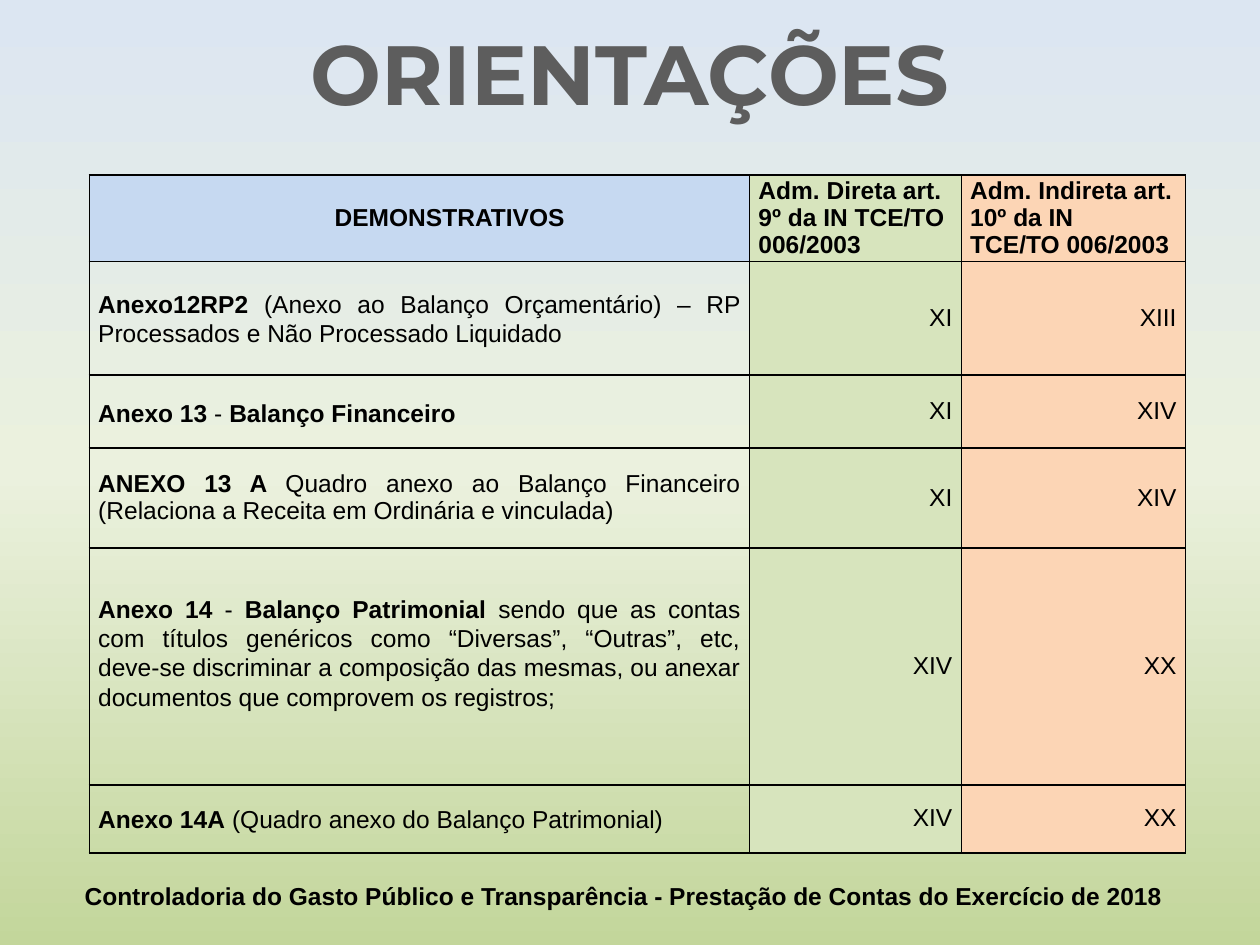
from dataclasses import dataclass

from lxml.etree import SubElement
from pptx import Presentation
from pptx.dml.color import RGBColor
from pptx.enum.text import MSO_ANCHOR, PP_ALIGN
from pptx.oxml import parse_xml
from pptx.oxml.ns import nsdecls, qn
from pptx.util import Cm, Pt


@dataclass(frozen=True)
class Theme:
    """Colours, fonts and type sizes of the slide."""
    background: tuple = ((0, "DCE6F2"), (50, "EBF1DE"), (100, "C3D69B"))
    header: str = "C6D9F1"
    direct: str = "D7E4BD"
    indirect: str = "FCD5B5"
    ink: str = "000000"
    title: str = "5D5D5D"
    title_font: str = "Montserrat"
    body_font: str = "Arial"
    title_size: int = 48
    body_size: int = 14


THEME = Theme()
TITLE = "ORIENTAÇÕES"
FOOTER = "Controladoria do Gasto Público e Transparência - Prestação de Contas do Exercício de 2018"
HEADERS = [
    ["DEMONSTRATIVOS"],
    ["Adm. Direta art. 9º da IN TCE/TO 006/2003"],
    ["Adm. Indireta art. 10º da IN", "TCE/TO 006/2003"],
]
# fmt: each statement alternates bold and regular text
STATEMENTS = [
    (["Anexo12RP2 ", "(Anexo ao Balanço Orçamentário) – RP Processados e Não Processado Liquidado"],
     "XI", "XIII", 1.07),
    (["Anexo 13", " - ", "Balanço Financeiro"], "XI", "XIV", 1.15),
    (["ANEXO 13 A ", "Quadro anexo ao Balanço Financeiro (Relaciona a Receita em Ordinária e vinculada)"],
     "XI", "XIV", 0.98),
    (["Anexo 14", " - ", "Balanço Patrimonial ",
      "sendo que as contas com títulos genéricos como “Diversas”, “Outras”, etc, deve-se discriminar "
      "a composição das mesmas, ou anexar documentos que comprovem os registros;"],
     "XIV", "XX", 1.07),
    (["Anexo 14A", " (Quadro anexo do Balanço Patrimonial)"], "XIV", "XX", 1.07),
]
COLUMN_WIDTHS = [13.31, 4.27, 4.52]
ROW_HEIGHTS = [1.6, 2.29, 1.47, 2.01, 4.78, 1.37]
TALL_ROW, TALL_ROW_BOTTOM = 4, 0.55


def style_run(run, bold, font=THEME.body_font, size=THEME.body_size, color=THEME.ink):
    run.font.name, run.font.size, run.font.bold = font, Pt(size), bold
    run.font.color.rgb = RGBColor.from_string(color)


def paint_background(slide):
    fill = slide.background.fill
    fill.gradient()
    fill.gradient_angle = 270
    stops = slide.element.find(".//" + qn("a:gsLst"))
    for stop in list(stops):
        stops.remove(stop)
    for position, color in THEME.background:
        stop = SubElement(stops, qn("a:gs"), pos=str(position * 1000))
        SubElement(stop, qn("a:srgbClr"), val=color)


def add_label(slide, text, box, alignment, **style):
    frame = slide.shapes.add_textbox(*map(Cm, box)).text_frame
    frame.word_wrap = True
    frame.text = text
    paragraph = frame.paragraphs[0]
    paragraph.alignment = alignment
    style_run(paragraph.runs[0], True, **style)


def format_cell(cell, fill):
    cell.vertical_anchor = MSO_ANCHOR.MIDDLE
    cell.margin_left = cell.margin_right = Cm(0.18)
    cell.margin_top = cell.margin_bottom = 0
    if fill:
        cell.fill.solid()
        cell.fill.fore_color.rgb = RGBColor.from_string(fill)
    else:
        cell.fill.background()
    properties = cell._tc.get_or_add_tcPr()
    for index, side in enumerate("LRTB"):
        properties.insert(index, parse_xml(
            f'<a:ln{side} {nsdecls("a")} w="{Pt(1)}"><a:solidFill>'
            f'<a:srgbClr val="{THEME.ink}"/></a:solidFill></a:ln{side}>'))


def write_cell(cell, lines, bold, alignment, spacing):
    cell.text_frame.text = "\n".join(lines)
    for paragraph in cell.text_frame.paragraphs:
        paragraph.alignment, paragraph.line_spacing = alignment, spacing
        for run in paragraph.runs:
            style_run(run, bold)


def write_statement(cell, parts, spacing):
    paragraph = cell.text_frame.paragraphs[0]
    paragraph.alignment, paragraph.line_spacing = PP_ALIGN.JUSTIFY, spacing
    for index, part in enumerate(parts):
        run = paragraph.add_run()
        run.text = part
        style_run(run, index % 2 == 0)


def add_statement_table(slide):
    table = slide.shapes.add_table(
        len(ROW_HEIGHTS), len(COLUMN_WIDTHS), Cm(1.8), Cm(3.53),
        Cm(sum(COLUMN_WIDTHS)), Cm(sum(ROW_HEIGHTS))).table
    table.first_row = table.horz_banding = False
    for column, width in zip(table.columns, COLUMN_WIDTHS):
        column.width = Cm(width)
    for row, height in zip(table.rows, ROW_HEIGHTS):
        row.height = Cm(height)
    for row_index, row in enumerate(table.rows):
        first_fill = None if row_index else THEME.header
        for cell, fill in zip(row.cells, (first_fill, THEME.direct, THEME.indirect)):
            format_cell(cell, fill)
    for index, lines in enumerate(HEADERS):
        alignment = PP_ALIGN.LEFT if index else PP_ALIGN.CENTER
        write_cell(table.cell(0, index), lines, True, alignment, 0.98)
    heading = table.cell(0, 0).text_frame.paragraphs[0]
    heading._p.get_or_add_pPr().set("indent", str(Cm(1.22)))
    for row_index, (parts, direct, indirect, spacing) in enumerate(STATEMENTS, 1):
        write_statement(table.cell(row_index, 0), parts, spacing)
        for column_index, value in enumerate((direct, indirect), 1):
            write_cell(table.cell(row_index, column_index), [value], False, PP_ALIGN.RIGHT, 0.98)
    table.cell(TALL_ROW, 0).margin_bottom = Cm(TALL_ROW_BOTTOM)


def main():
    presentation = Presentation()
    presentation.slide_width, presentation.slide_height = Cm(25.4), Cm(19.05)
    slide = presentation.slides.add_slide(presentation.slide_layouts[6])
    paint_background(slide)
    add_label(slide, FOOTER, (1.4, 17.63, 22.3, 0.86), PP_ALIGN.RIGHT)
    add_statement_table(slide)
    add_label(slide, TITLE, (0.15, 0.3, 25.1, 2.31), PP_ALIGN.CENTER,
              font=THEME.title_font, size=THEME.title_size, color=THEME.title)
    presentation.save("out.pptx")


if __name__ == "__main__":
    main()
